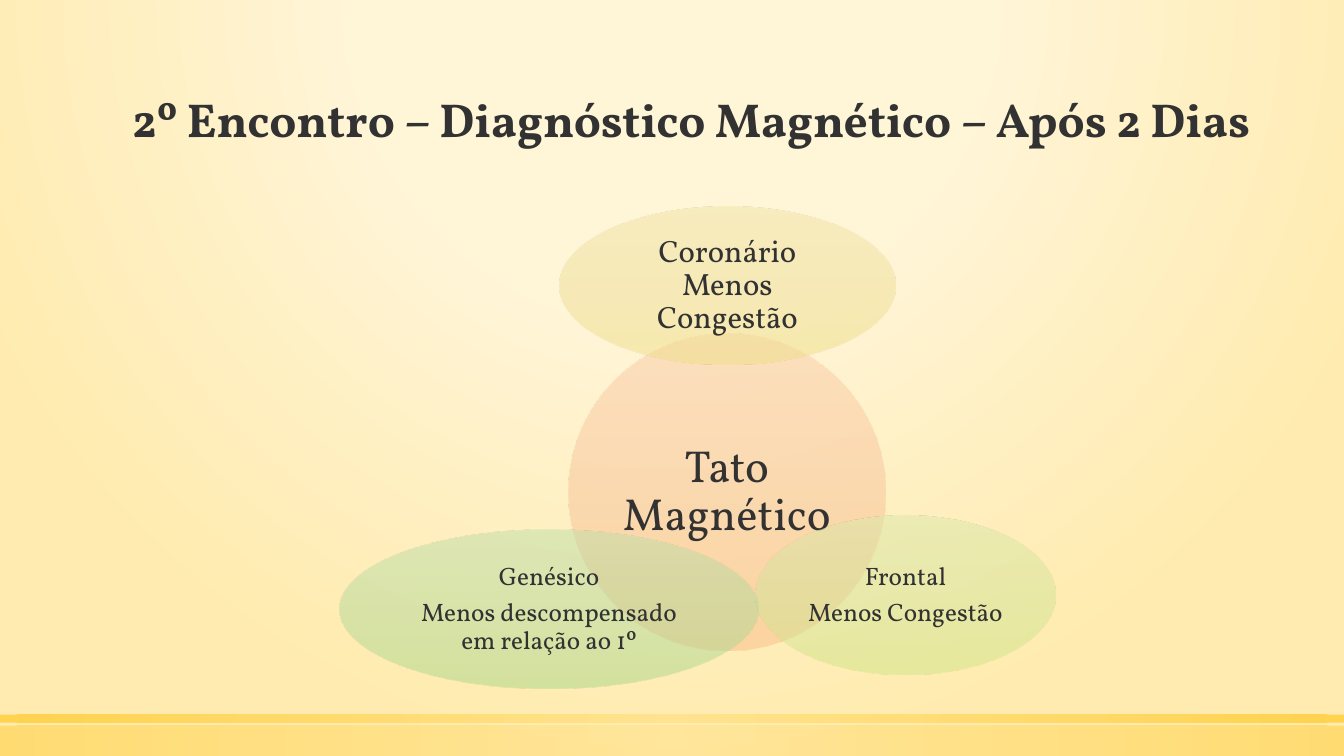
from lxml import etree
from pptx import Presentation
from pptx.dml.color import RGBColor
from pptx.enum.shapes import MSO_SHAPE
from pptx.enum.text import MSO_ANCHOR, MSO_AUTO_SIZE, PP_ALIGN
from pptx.oxml.ns import qn
from pptx.util import Inches, Pt

FONT = "Vollkorn"
TITLE_ONLY = 5
OVAL, RECTANGLE = MSO_SHAPE.OVAL, MSO_SHAPE.RECTANGLE
LEFT, CENTER = PP_ALIGN.LEFT, PP_ALIGN.CENTER

INK = RGBColor(0x32, 0x32, 0x32)
CREAM = RGBColor(0xFF, 0xF5, 0xD7)
SAND = RGBColor(0xFF, 0xEB, 0xAF)
LIGHT_GOLD = RGBColor(0xFF, 0xE1, 0x86)
GOLD = RGBColor(0xFF, 0xCD, 0x36)
ORANGE = [RGBColor(0xFA, 0xCD, 0xA9), RGBColor(0xF8, 0xC3, 0x9A), RGBColor(0xFB, 0xBB, 0x87)]
YELLOW = [RGBColor(0xF2, 0xE5, 0xA8), RGBColor(0xEF, 0xE0, 0x9A), RGBColor(0xF1, 0xDF, 0x87)]
LIME = [RGBColor(0xDA, 0xE9, 0xA8), RGBColor(0xD3, 0xE5, 0x9A), RGBColor(0xCF, 0xE5, 0x87)]
GREEN = [RGBColor(0xBF, 0xE0, 0xA9), RGBColor(0xB4, 0xDA, 0x9B), RGBColor(0xA9, 0xD8, 0x89)]

# Ellipse box (left, top, width, height), colours, text size, inset, paragraphs
CIRCLES = [
    ((5.64, 3.31, 3.14, 3.14), ORANGE, 32, 0.04, ["Tato Magnético"]),
    ((5.55, 2.05, 3.33, 1.57), YELLOW, 22, 0.03, ["Coronário Menos Congestão"]),
    ((7.49, 5.12, 2.98, 1.57), LIME, 18, 0.03, ["Frontal", "Menos Congestão"]),
    ((3.37, 5.26, 4.15, 1.57), GREEN, 18, 0.03,
     ["Genésico", "Menos descompensado em relação ao 1º"]),
]


def set_gradient(properties, stops, focus=None):
    """Replace a solid fill with (position, colour, opacity) stops in percent.

    The gradient is circular around focus (left, top, right, bottom), or vertical without it.
    """
    gradient = etree.Element(qn("a:gradFill"), rotWithShape="1")
    stop_list = etree.SubElement(gradient, qn("a:gsLst"))
    for position, color, opacity in stops:
        stop = etree.SubElement(stop_list, qn("a:gs"), pos=str(position * 1000))
        color_element = etree.SubElement(stop, qn("a:srgbClr"), val=str(color))
        if opacity < 100:
            etree.SubElement(color_element, qn("a:alpha"), val=str(opacity * 1000))
    if focus:
        path = etree.SubElement(gradient, qn("a:path"), path="circle")
        sides = {side: str(value * 1000) for side, value in zip("ltrb", focus)}
        etree.SubElement(path, qn("a:fillToRect"), **sides)
    else:
        etree.SubElement(gradient, qn("a:lin"), ang="5400000", scaled="0")
    properties.replace(properties.find(qn("a:solidFill")), gradient)


def add_gradient_shape(slide, kind, box, stops, focus=None):
    shape = slide.shapes.add_shape(kind, *map(Inches, box))
    shape.shadow.inherit = False
    shape.line.fill.background()
    shape.fill.solid()
    set_gradient(shape.element.spPr, stops, focus)
    return shape


def format_paragraph(paragraph, size, alignment, bold=False):
    paragraph.alignment = alignment
    paragraph.line_spacing = 0.9
    for run in paragraph.runs:
        run.font.name = FONT
        run.font.size = Pt(size)
        run.font.bold = bold
        run.font.color.rgb = INK


def paint_background(slide):
    slide.background.fill.solid()
    properties = slide.element.find(".//" + qn("p:bgPr"))
    stops = [(0, CREAM, 59), (40, CREAM, 66), (100, SAND, 100)]
    set_gradient(properties, stops, (50, -80, 50, 180))


def add_footer_bands(slide):
    for top, height, opacity in [(7.2, 0.3, 50), (7.09, 0.08, 80)]:
        stops = [(0, LIGHT_GOLD, opacity), (100, GOLD, opacity)]
        add_gradient_shape(slide, RECTANGLE, (0, top, 13.33, height), stops, (50, 50, 50, 50))


def place_title(slide, box, text):
    title = slide.shapes.title
    title.left, title.top, title.width, title.height = map(Inches, box)
    frame = title.text_frame
    frame.text = text
    frame.auto_size = MSO_AUTO_SIZE.NONE
    frame.vertical_anchor = MSO_ANCHOR.BOTTOM
    format_paragraph(frame.paragraphs[0], 34, LEFT, bold=True)


def add_circle(slide, box, colors, size, inset, lines):
    stops = [(position, color, 50) for position, color in zip((0, 50, 100), colors)]
    frame = add_gradient_shape(slide, OVAL, box, stops).text_frame
    frame.word_wrap = True
    frame.vertical_anchor = MSO_ANCHOR.MIDDLE
    frame.margin_left = frame.margin_right = Inches(inset)
    frame.margin_top = frame.margin_bottom = Inches(inset)
    frame.text = "\n".join(lines)
    for paragraph in frame.paragraphs:
        format_paragraph(paragraph, size, CENTER)
        paragraph.space_after = Pt(size * 0.35)


def main():
    presentation = Presentation()
    presentation.slide_width, presentation.slide_height = Inches(13.33), Inches(7.5)
    slide = presentation.slides.add_slide(presentation.slide_layouts[TITLE_ONLY])
    paint_background(slide)
    add_footer_bands(slide)
    place_title(slide, (1.21, 0.51, 11.41, 1.01),
                "2º Encontro – Diagnóstico Magnético – Após 2 Dias")
    for circle in CIRCLES:
        add_circle(slide, *circle)
    presentation.save("out.pptx")


if __name__ == "__main__":
    main()
